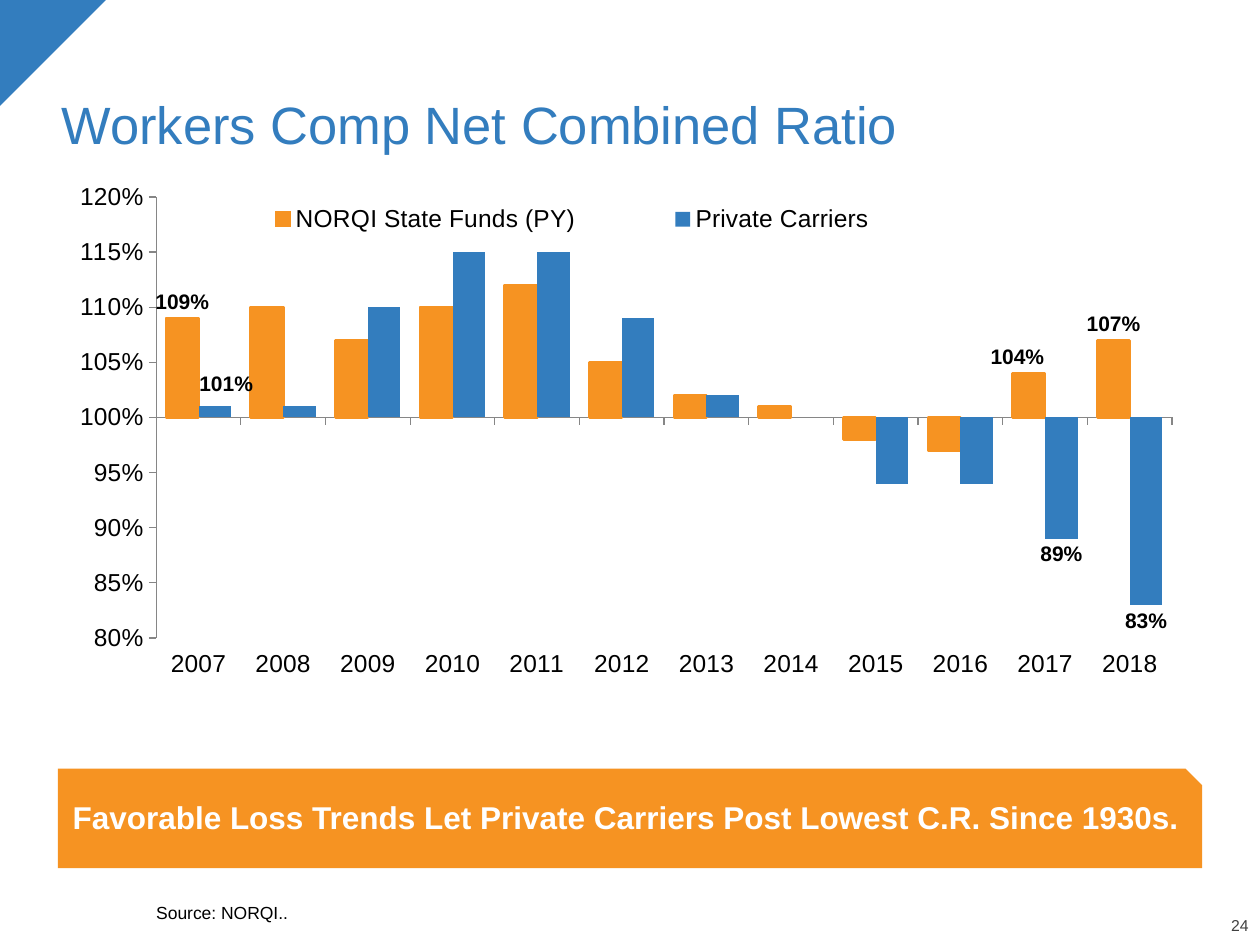
from dataclasses import dataclass

from lxml.etree import SubElement
from pptx import Presentation
from pptx.chart.chart import Chart
from pptx.chart.data import CategoryChartData
from pptx.dml.color import RGBColor
from pptx.enum.chart import (XL_CHART_TYPE, XL_LABEL_POSITION, XL_LEGEND_POSITION,
                             XL_TICK_LABEL_POSITION, XL_TICK_MARK)
from pptx.enum.shapes import MSO_SHAPE
from pptx.enum.text import MSO_ANCHOR, PP_ALIGN
from pptx.oxml import parse_xml
from pptx.oxml.ns import nsdecls, qn
from pptx.util import Inches, Pt

BLUE = RGBColor(0x33, 0x7D, 0xBE)
ORANGE = RGBColor(0xF6, 0x93, 0x22)
BLACK = RGBColor(0, 0, 0)
WHITE = RGBColor(0xFF, 0xFF, 0xFF)
DARK = RGBColor(0x40, 0x40, 0x40)
GRAY = RGBColor(0x86, 0x86, 0x86)
FONT = "Arial"


@dataclass
class Tag:
    index: int
    dx: float = 0
    dy: float = 0


@dataclass
class Group:
    name: str
    color: RGBColor
    values: list[float]
    tags: list[Tag]
    edge: float = 0


GROUPS = [
    Group("NORQI State Funds (PY)", ORANGE,
          [1.09, 1.1, 1.07, 1.1, 1.12, 1.05, 1.02, 1.01, 0.98, 0.97, 1.04, 1.07],
          [Tag(0), Tag(10, -0.01), Tag(11)], 1.5),
    Group("Private Carriers", BLUE,
          [1.01, 1.01, 1.1, 1.15, 1.15, 1.09, 1.02, 1, 0.94, 0.94, 0.89, 0.83],
          [Tag(0, 0.01, -0.01), Tag(10), Tag(11)]),
]


def write(shape, text: str, *, size: float, color: RGBColor, bold: bool = False,
          align=PP_ALIGN.LEFT, anchor=MSO_ANCHOR.BOTTOM,
          inset: tuple = (0, 0, 0, 0)) -> None:
    frame = shape.text_frame
    frame.word_wrap = True
    frame.vertical_anchor = anchor
    (frame.margin_left, frame.margin_top,
     frame.margin_right, frame.margin_bottom) = map(Inches, inset)
    para = frame.paragraphs[0]
    para.text = text
    para.alignment = align
    para.line_spacing = 0.9
    font = para.runs[0].font
    font.name, font.size, font.bold = FONT, Pt(size), bold
    font.color.rgb = color


def add_box(slide, *area: float):
    return slide.shapes.add_textbox(*map(Inches, area))


def add_form(slide, kind: MSO_SHAPE, color: RGBColor, *area: float):
    form = slide.shapes.add_shape(kind, *map(Inches, area))
    form.shadow.inherit = False
    form.fill.solid()
    form.fill.fore_color.rgb = color
    form.line.fill.background()
    return form


def make_layout(**parts):
    layout = parse_xml(f"<c:layout {nsdecls('c')}/>")
    manual = SubElement(layout, qn("c:manualLayout"))
    for key, val in parts.items():
        SubElement(manual, qn(f"c:{key}")).set("val", str(val))
    return layout


def put_layout(node, after: str, **parts) -> None:
    for old in node.findall(qn("c:layout")):
        node.remove(old)
    mark = node.find(qn(after)) if after else None
    node.insert(0 if mark is None else node.index(mark) + 1, make_layout(**parts))


def style_group(series, group: Group) -> None:
    series.invert_if_negative = False
    series.format.fill.solid()
    series.format.fill.fore_color.rgb = group.color
    if group.edge:
        series.format.line.color.rgb = group.color
        series.format.line.width = Pt(group.edge)
    for tag in group.tags:
        label = series.points[tag.index].data_label
        label.position = XL_LABEL_POSITION.OUTSIDE_END
        font = label.font
        font.name, font.size, font.bold = FONT, Pt(12), True
        font.color.rgb = BLACK
    nodes = series.data_labels._element.findall(qn("c:dLbl"))
    for node, tag in zip(nodes, group.tags):
        if tag.dx or tag.dy:
            put_layout(node, "c:idx", x=tag.dx, y=tag.dy)
    series.data_labels.show_value = False


def style_axes(chart: Chart) -> None:
    years, rates = chart.category_axis, chart.value_axis
    for axis in (years, rates):
        axis.has_major_gridlines = False
        axis.major_tick_mark = XL_TICK_MARK.OUTSIDE
        axis.minor_tick_mark = XL_TICK_MARK.NONE
        axis.format.line.color.rgb = GRAY
    years.tick_label_position = XL_TICK_LABEL_POSITION.LOW
    rates.minimum_scale, rates.maximum_scale = 0.8, 1.2
    rates.major_unit = 0.05
    rates.crosses_at = 1
    rates.tick_labels.number_format = "0%"
    rates.tick_labels.number_format_is_linked = False


def add_ratios(slide) -> None:
    data = CategoryChartData(number_format="0%")
    data.categories = [str(year) for year in range(2007, 2019)]
    for group in GROUPS:
        data.add_series(group.name, group.values)
    chart = slide.shapes.add_chart(
        XL_CHART_TYPE.COLUMN_CLUSTERED,
        *map(Inches, (0.46, 1.4, 9.07, 4.54)), data).chart
    chart.has_title = False
    chart.font.name, chart.font.size = FONT, Pt(14)
    chart.font.color.rgb = BLACK
    plot = chart.plots[0]
    plot.gap_width, plot.overlap = 60, 0
    plot.vary_by_categories = False
    for series, group in zip(plot.series, GROUPS):
        style_group(series, group)
    style_axes(chart)
    chart.has_legend = True
    legend = chart.legend
    legend.position = XL_LEGEND_POSITION.TOP
    legend.include_in_layout = True
    put_layout(legend._element, "c:legendPos", xMode="edge", yMode="edge",
               x=0.11, y=0.04, w=0.68, h=0.07)
    area = chart._chartSpace.find(".//" + qn("c:plotArea"))
    put_layout(area, "", layoutTarget="inner", xMode="edge", yMode="edge",
               x=0.086, y=0.036, w=0.889, h=0.771)


def main() -> None:
    deck = Presentation()
    deck.slide_width, deck.slide_height = Inches(10), Inches(7.5)
    slide = deck.slides.add_slide(deck.slide_layouts[6])
    corner = add_form(slide, MSO_SHAPE.RIGHT_TRIANGLE, BLUE, 0, 0, 0.84, 0.84)
    corner.rotation = 90
    write(add_box(slide, 9.43, 7.29, 0.48, 0.13), "24",
          size=9, color=DARK, align=PP_ALIGN.RIGHT)
    write(add_box(slide, 0.39, 0.25, 9.25, 1.04), "Workers Comp Net Combined Ratio",
          size=30, color=BLUE, inset=(0.1, 0.05, 0.1, 0.05))
    write(add_box(slide, 1.24, 6.88, 8.4, 0.45), "Source: NORQI..",
          size=10, color=BLACK)
    banner = add_form(slide, MSO_SHAPE.SNIP_1_RECTANGLE, ORANGE, 0.46, 6.1, 9.08, 0.79)
    write(banner,
          "Favorable Loss Trends Let Private Carriers Post Lowest C.R. Since 1930s.",
          size=18, color=WHITE, bold=True, align=PP_ALIGN.CENTER,
          anchor=MSO_ANCHOR.MIDDLE, inset=(0.1, 0.05, 0.1, 0.1))
    add_ratios(slide)
    deck.save("out.pptx")


if __name__ == "__main__":
    main()
